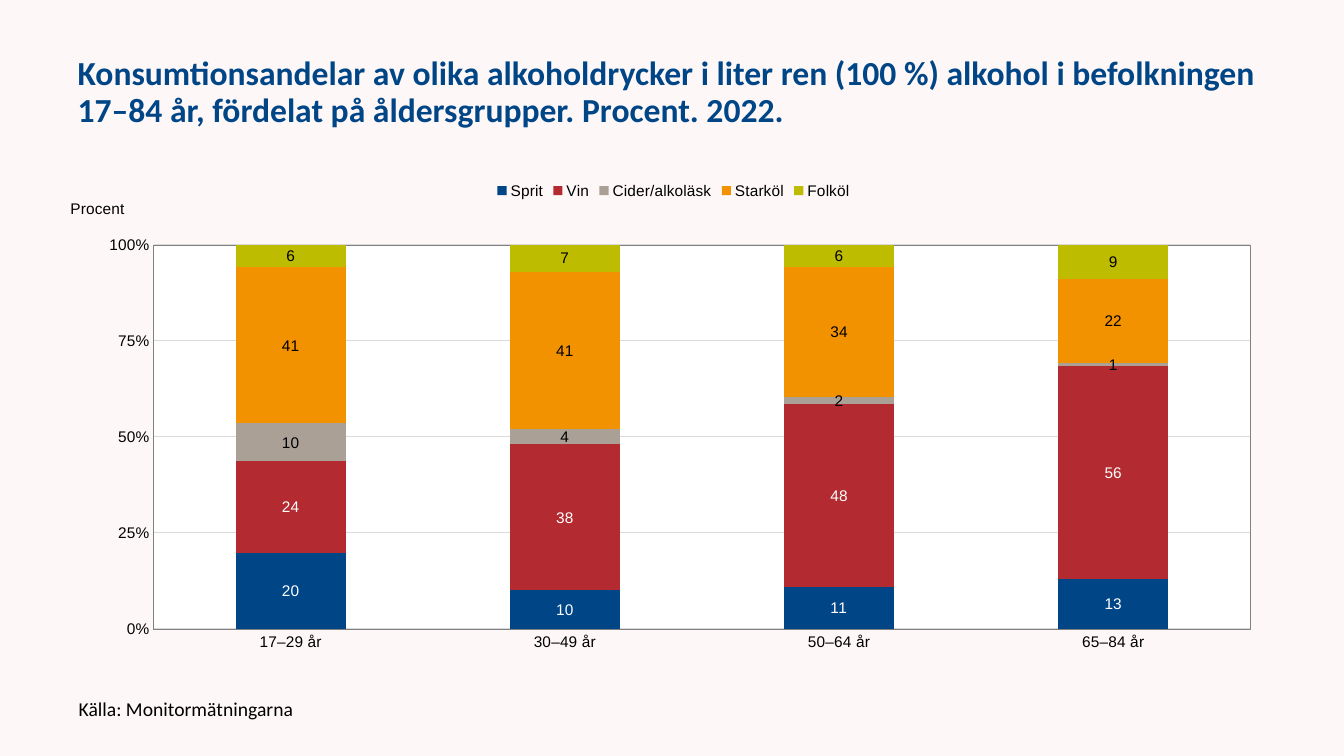
"""Build a slide on shares of alcohol consumption by drink and age group."""
from lxml import etree
from pptx import Presentation
from pptx import util as u
from pptx.chart.data import CategoryChartData
from pptx.dml.color import RGBColor
from pptx.enum import chart as ch, text
from pptx.oxml import parse_xml
from pptx.oxml.ns import nsdecls, qn

HEADING = ("Konsumtionsandelar av olika alkoholdrycker i liter ren (100 %) alkohol "
           "i befolkningen 17–84 år, fördelat på åldersgrupper. Procent. 2022.")
SOURCE = "Källa: Monitormätningarna"
AXIS_UNIT = "Procent"
AGE_GROUPS = ["17–29 år", "30–49 år", "50–64 år", "65–84 år"]
DRINKS = [
    ("Sprit", (20, 10, 11, 13), "blue", "white"),
    ("Vin", (24, 38, 48, 56), "red", "white"),
    ("Cider/alkoläsk", (10, 4, 2, 1), "taupe", "black"),
    ("Starköl", (41, 41, 34, 22), "orange", "black"),
    ("Folköl", (6, 7, 6, 9), "olive", "black"),
]
COLORS = {
    "background": "FEF7F7", "blue": "004687", "red": "B32B31", "taupe": "AAA096",
    "orange": "F29200", "olive": "BEBC00", "white": "FFFFFF", "black": "000000",
    "axis": "808080", "grid": "D9D9D9",
}


def rgb(name):
    return RGBColor.from_string(COLORS[name])


def set_font(font, face, size, color, bold=False):
    font.name, font.size, font.bold = face, u.Pt(size), bold
    font.color.rgb = rgb(color)


def set_line(line, color, width):
    line.color.rgb = rgb(color)
    line.width = u.Pt(width)


def set_layout(parent, index, **values):
    """Place a chart part by fractions of the chart area."""
    old = parent.find(qn("c:layout"))
    if old is not None:
        parent.remove(old)
    layout = etree.Element(qn("c:layout"))
    manual = etree.SubElement(layout, qn("c:manualLayout"))
    for tag, value in values.items():
        etree.SubElement(manual, qn(f"c:{tag}")).set("val", str(value))
    parent.insert(index, layout)


def fill_placeholder(holder, box, words, size, color, bold, spacing):
    holder.left, holder.top, holder.width, holder.height = map(u.Inches, box)
    frame = holder.text_frame
    frame.text = words
    frame.word_wrap = True
    frame.auto_size = text.MSO_AUTO_SIZE.NONE
    frame.vertical_anchor = text.MSO_ANCHOR.MIDDLE
    paragraph = frame.paragraphs[0]
    properties = paragraph._p.get_or_add_pPr()
    properties.set("marL", "0")
    properties.set("indent", "0")
    etree.SubElement(properties, qn("a:buNone"))
    paragraph.alignment = text.PP_ALIGN.LEFT
    paragraph.line_spacing = spacing
    paragraph.space_before = u.Pt(0)
    set_font(paragraph.font, "Calibri", size, color, bold)


def add_shares_chart(slide):
    shares = CategoryChartData(number_format="0")
    shares.categories = AGE_GROUPS
    for drink, values, _, _ in DRINKS:
        shares.add_series(drink, values)
    box = map(u.Inches, (0.67, 1.69, 12.02, 4.95))
    chart = slide.shapes.add_chart(ch.XL_CHART_TYPE.COLUMN_STACKED_100, *box, shares).chart
    set_font(chart.font, "Arial", 11, "black")
    chart.has_title = False
    chart.has_legend = True
    chart.legend.position = ch.XL_LEGEND_POSITION.TOP
    chart.legend.include_in_layout = False
    set_font(chart.legend.font, "Arial", 11, "black")

    columns = chart.plots[0]
    columns.gap_width, columns.overlap = 150, 100
    columns.vary_by_categories = False
    for series, (_, _, color, label_color) in zip(columns.series, DRINKS):
        series.format.fill.solid()
        series.format.fill.fore_color.rgb = rgb(color)
        labels = series.data_labels
        labels.show_value = True
        labels.number_format, labels.number_format_is_linked = "0", False
        labels.position = ch.XL_LABEL_POSITION.CENTER
        set_font(labels.font, "Arial", 11, label_color)

    ages, percent = chart.category_axis, chart.value_axis
    for axis in (ages, percent):
        axis.major_tick_mark = axis.minor_tick_mark = ch.XL_TICK_MARK.NONE
        set_line(axis.format.line, "axis", 0.25)
        set_font(axis.tick_labels.font, "Arial", 11, "black")
    percent.minimum_scale, percent.maximum_scale, percent.major_unit = 0, 1, 0.25
    percent.tick_labels.number_format = "0%"
    percent.tick_labels.number_format_is_linked = False
    percent.has_major_gridlines = True
    set_line(percent.major_gridlines.format.line, "grid", 0.75)

    unit = percent.axis_title
    unit.text_frame.text = AXIS_UNIT
    set_font(unit.text_frame.paragraphs[0].font, "Arial", 11, "black")
    unit_title = unit._element
    body = unit_title.find(f".//{qn('a:bodyPr')}")
    body.set("rot", "0")
    body.set("vert", "horz")
    set_layout(unit_title, 1, xMode="edge", yMode="edge", x=0, y=0.05)

    plot_area = chart._chartSpace.find(f".//{qn('c:plotArea')}")
    set_layout(plot_area, 0, layoutTarget="inner", xMode="edge", yMode="edge",
               x=0.071, y=0.149, w=0.905, h=0.77)
    plot_area.append(parse_xml(
        f'<c:spPr {nsdecls("c", "a")}>'
        f'<a:solidFill><a:srgbClr val="{COLORS["white"]}"/></a:solidFill>'
        f'<a:ln w="{u.Pt(0.25)}"><a:solidFill><a:srgbClr val="{COLORS["axis"]}"/>'
        '</a:solidFill></a:ln></c:spPr>'))


def main():
    deck = Presentation()
    deck.slide_width, deck.slide_height = u.Inches(13.33), u.Inches(7.5)
    slide = deck.slides.add_slide(deck.slide_layouts[1])
    slide.background.fill.solid()
    slide.background.fill.fore_color.rgb = rgb("background")
    fill_placeholder(slide.shapes.title, (0.67, 0.3, 12, 1.25), HEADING, 24, "blue", True, 0.9)
    fill_placeholder(slide.placeholders[1], (0.68, 6.9, 6, 0.3), SOURCE, 14, "black", False, 0.8)
    add_shares_chart(slide)
    deck.save("out.pptx")


if __name__ == "__main__":
    main()
